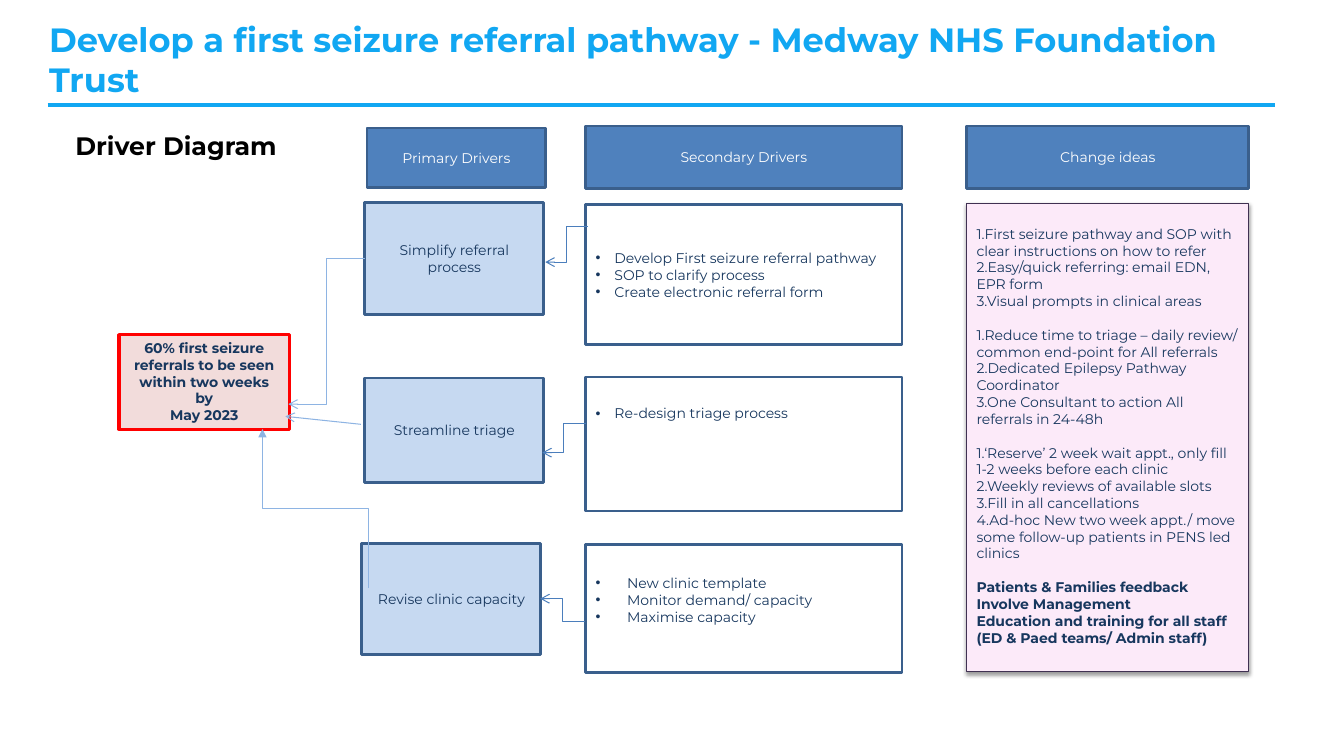
from lxml.etree import SubElement
from pptx import Presentation
from pptx.dml.color import RGBColor
from pptx.enum.shapes import MSO_CONNECTOR, MSO_SHAPE
from pptx.enum.text import MSO_ANCHOR, PP_ALIGN
from pptx.oxml.ns import qn
from pptx.util import Pt

COLORS = {
    "title": "11A7F2", "black": "000000", "white": "FFFFFF", "ink": "17375E",
    "header": "4F81BD", "edge": "3A5F8C", "driver": "C6D9F1",
    "aim": "F2DCDB", "aim_edge": "FF0000", "ideas": "FCEAF9", "ideas_edge": "403152",
    "aim_arrow": "8EB4E3", "driver_arrow": "4B7EBC",
}
FONT = "Montserrat"
LINE = 12

CHANGE_IDEAS = [
    ["1.First seizure pathway and SOP with clear instructions on how to refer",
     "2.Easy/quick referring: email EDN, EPR form",
     "3.Visual prompts in clinical areas"],
    ["1.Reduce time to triage – daily review/ common end-point for All referrals",
     "2.Dedicated Epilepsy Pathway Coordinator",
     "3.One Consultant to action All referrals in 24-48h"],
    ["1.‘Reserve’ 2 week wait appt., only fill 1-2 weeks before each clinic",
     "2.Weekly reviews of available slots",
     "3.Fill in all cancellations",
     "4.Ad-hoc New two week appt./ move some follow-up patients in PENS led clinics"],
    ["Patients & Families feedback",
     "Involve Management",
     "Education and training for all staff (ED & Paed teams/ Admin staff)"],
]


def color(key):
    """Return the palette colour for a key."""
    return RGBColor.from_string(COLORS[key])


def write(holder, lines, size=10, ink="ink", bold=False, align=PP_ALIGN.LEFT,
          anchor=MSO_ANCHOR.MIDDLE, inset=3.6, indent=0):
    """Write paragraphs, bulleted when an indent is given."""
    frame = holder.text_frame
    frame.word_wrap = True
    frame.vertical_anchor = anchor
    frame.margin_top = Pt(inset)
    frame.text = "\n".join(lines)
    for paragraph in frame.paragraphs:
        if indent:
            properties = paragraph._p.get_or_add_pPr()
            properties.set("marL", str(Pt(indent)))
            properties.set("indent", str(-Pt(indent)))
            SubElement(properties, qn("a:buFont"), typeface="Arial")
            SubElement(properties, qn("a:buChar"), char="•")
        paragraph.alignment = align
        for run in paragraph.runs:
            run.font.name = FONT
            run.font.size = Pt(size)
            run.font.bold = bold
            run.font.color.rgb = color(ink)
    return frame


def add_panel(slide, box, fill, edge="edge", weight=2):
    """Draw a bordered rectangle in the given box."""
    panel = slide.shapes.add_shape(MSO_SHAPE.RECTANGLE, *map(Pt, box))
    panel.shadow.inherit = False
    panel.fill.solid()
    panel.fill.fore_color.rgb = color(fill)
    panel.line.color.rgb = color(edge)
    panel.line.width = Pt(weight)
    return panel


def add_link(slide, kind, ends, ink, weight=0.75, head=None):
    """Draw a connector between two points, with an optional arrowhead."""
    link = slide.shapes.add_connector(kind, *map(Pt, ends))
    link.line.color.rgb = color(ink)
    link.line.width = Pt(weight)
    if head:
        SubElement(link.line._get_or_add_ln(), qn("a:tailEnd"), type=head)
    SubElement(link.element.spPr, qn("a:effectLst"))
    return link


def add_title(slide, box):
    """Place the slide title and the rule under it."""
    left, top, width, height = box
    title = slide.shapes.add_textbox(*map(Pt, box))
    write(title, ["Develop a first seizure referral pathway - Medway NHS Foundation Trust"],
          24, "title", True)
    rule = top + height - 6
    add_link(slide, MSO_CONNECTOR.STRAIGHT, (left + 6, rule, left + 883, rule), "title", 2.25)


def add_subtitle(slide, box):
    """Place the diagram name."""
    subtitle = slide.shapes.add_textbox(*map(Pt, box))
    write(subtitle, ["Driver Diagram"], 18, "black", True, anchor=MSO_ANCHOR.TOP)


def add_aim(slide, box):
    """Place the aim that all drivers lead to."""
    aim = add_panel(slide, box, "aim", "aim_edge", 2.25)
    write(aim, ["60% first seizure referrals to be seen within two weeks by", "May 2023"],
          bold=True, align=PP_ALIGN.CENTER, anchor=MSO_ANCHOR.TOP)


def add_header(slide, box, label):
    """Place a column header."""
    write(add_panel(slide, box, "header"), [label], ink="white", align=PP_ALIGN.CENTER)


def add_primary_drivers(slide, box):
    """Place the primary driver column."""
    left, top, width, height = box
    add_header(slide, (left + 3.6, top + 1.4, width, 42.5), "Primary Drivers")
    drivers = [(2.1, 54.7, 79.9, "Simplify referral process"),
               (2.1, 180, 74.9, "Streamline triage"),
               (0, 298.1, 79.2, "Revise clinic capacity")]
    for shift, drop, tall, label in drivers:
        driver = add_panel(slide, (left + shift, top + drop, width, tall), "driver")
        write(driver, [label], align=PP_ALIGN.CENTER)


def add_secondary_drivers(slide, box):
    """Place the secondary driver column with its bulleted actions."""
    left, top, width, height = box
    add_header(slide, (left, top, width, 44.6), "Secondary Drivers")
    middle, upper = MSO_ANCHOR.MIDDLE, MSO_ANCHOR.TOP
    groups = [
        (56.2, 100.1, middle, 3.6, 13.5,
         ["Develop First seizure referral pathway", "SOP to clarify process",
          "Create electronic referral form"]),
        (179.3, 95.8, upper, 20, 13.5, ["Re-design triage process"]),
        (298.8, 91.4, upper, 21.6, 22.5,
         ["New clinic template", "Monitor demand/ capacity", "Maximise capacity"]),
    ]
    for drop, tall, anchor, inset, indent, actions in groups:
        group = add_panel(slide, (left, top + drop, width, tall), "white")
        write(group, actions, anchor=anchor, inset=inset, indent=indent)


def add_change_ideas(slide, box):
    """Place the change ideas column, one spaced group per driver."""
    left, top, width, height = box
    add_header(slide, (left, top, width, 44.6), "Change ideas")
    ideas = add_panel(slide, (left, top + 55.4, width, height - 55.4),
                      "ideas", "ideas_edge", 0.75)
    effects = ideas.element.spPr.find(qn("a:effectLst"))
    shadow = SubElement(effects, qn("a:outerShdw"), blurRad=str(Pt(3.1)),
                        dist=str(Pt(1.6)), dir="5400000", rotWithShape="0")
    tint = SubElement(shadow, qn("a:srgbClr"), val=COLORS["black"])
    SubElement(tint, qn("a:alpha"), val="38000")
    lines = [idea for group in CHANGE_IDEAS for idea in group]
    frame = write(ideas, lines, anchor=MSO_ANCHOR.TOP, inset=3.6 + LINE)
    openers = [group[0] for group in CHANGE_IDEAS[1:]]
    for paragraph in frame.paragraphs:
        if paragraph.text in openers:
            paragraph.space_before = Pt(LINE)
    for paragraph in frame.paragraphs[-len(CHANGE_IDEAS[-1]):]:
        paragraph.runs[0].font.bold = True


def add_arrows(slide, box):
    """Link secondary drivers to primary drivers and those to the aim."""
    left, top, width, height = box
    elbow, straight = MSO_CONNECTOR.ELBOW, MSO_CONNECTOR.STRAIGHT
    arrows = [
        (elbow, (175.6, 95, 121, 198.7), "aim_arrow", "arrow"),
        (straight, (172.8, 213.1, 118.8, 207.4), "aim_arrow", "arrow"),
        (elbow, (334.8, 72, 304.5, 97.2), "driver_arrow", "arrow"),
        (elbow, (333.3, 212.4, 302.4, 233.3), "driver_arrow", "arrow"),
        (elbow, (332.6, 354.2, 300.9, 337.7), "driver_arrow", "arrow"),
        (elbow, (83.5, 311.2, 197.2, 235.4), "aim_arrow", "triangle"),
    ]
    for kind, (x1, y1, x2, y2), ink, head in arrows:
        ends = (left + x1, top + y1, left + x2, top + y2)
        link = add_link(slide, kind, ends, ink, head=head)
        if head == "triangle":
            link.element.spPr.find(qn("a:xfrm")).set("rot", "16200000")


def main():
    """Build the driver diagram slide."""
    deck = Presentation()
    deck.slide_width, deck.slide_height = Pt(960), Pt(540)
    slide = deck.slides.add_slide(deck.slide_layouts[6])
    add_title(slide, (28, 3, 864, 78))
    add_subtitle(slide, (46.8, 89.3, 177.8, 28.8))
    add_aim(slide, (85, 239, 121.7, 67.7))
    add_primary_drivers(slide, (258.5, 90, 127.8, 377.3))
    add_secondary_drivers(slide, (418.3, 90, 226, 390.2))
    add_change_ideas(slide, (690.5, 90, 201.6, 389.5))
    add_arrows(slide, (85, 90, 335, 390))
    deck.save("out.pptx")


if __name__ == "__main__":
    main()
